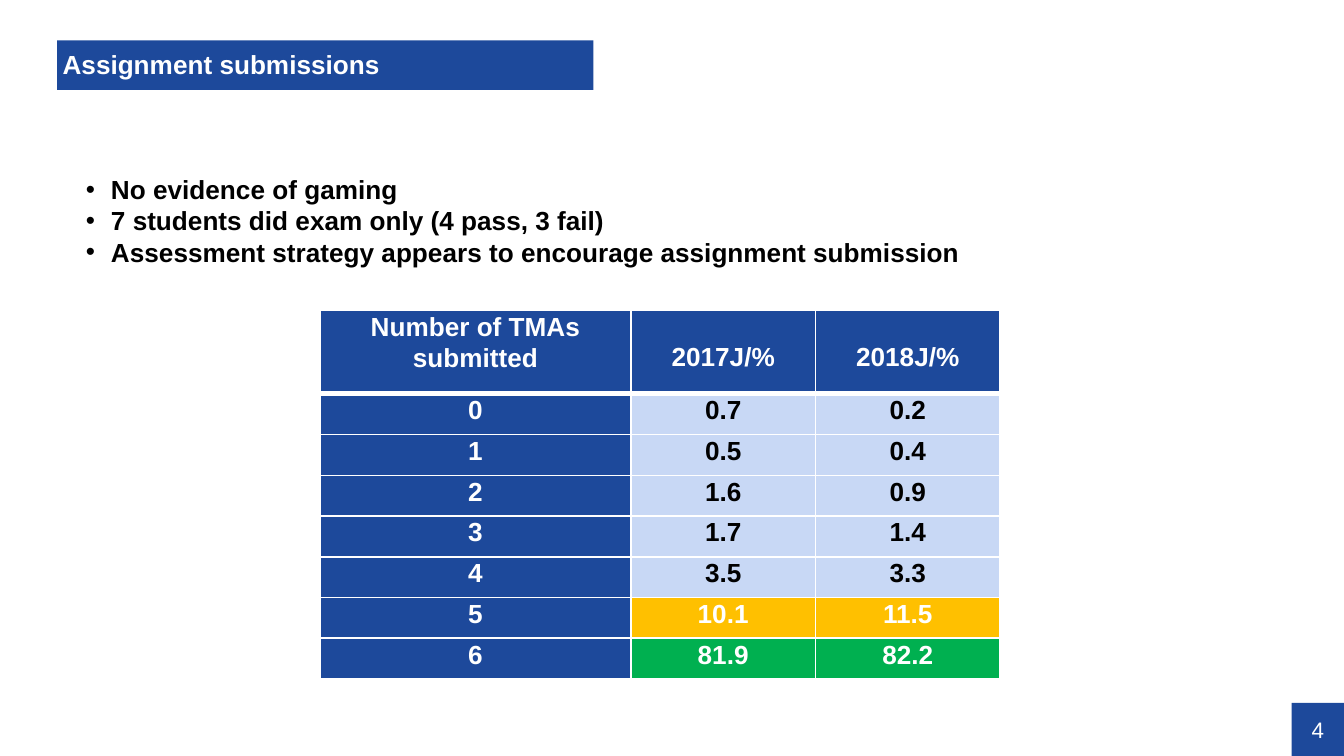
from dataclasses import dataclass

from lxml import etree
from pptx import Presentation
from pptx.dml.color import RGBColor
from pptx.enum.shapes import MSO_SHAPE
from pptx.enum.text import MSO_ANCHOR, MSO_AUTO_SIZE, PP_ALIGN
from pptx.oxml.ns import qn
from pptx.util import Pt

RECTANGLE = MSO_SHAPE.RECTANGLE
MIDDLE = MSO_ANCHOR.MIDDLE
LEFT, CENTER = PP_ALIGN.LEFT, PP_ALIGN.CENTER
GROW = MSO_AUTO_SIZE.SHAPE_TO_FIT_TEXT


@dataclass(frozen=True)
class Theme:
    font: str = "Arial"
    body_size: float = 14
    number_size: float = 12
    blue: str = "1D499B"
    pale_blue: str = "C8D8F5"
    amber: str = "FFC000"
    green: str = "00B050"
    white: str = "FFFFFF"
    black: str = "000000"


THEME = Theme()


@dataclass(frozen=True)
class Banner:
    text: str
    left: float
    top: float
    width: float
    height: float
    size: float
    bold: bool
    align: PP_ALIGN
    line_spacing: float = 1.0
    inset_left: float = 0
    inset_top: float = 0


@dataclass(frozen=True)
class SubmissionRow:
    labels: tuple[str, str, str]
    fill: str = THEME.pale_blue
    color: str = THEME.black


TITLE = Banner("Assignment submissions", 30.6, 21.6, 287.3, 26.6, THEME.body_size,
               True, LEFT, 0.9, 2.9, 1.4)
PAGE_NUMBER = Banner("4", 691.9, 376.6, 28.1, 28.4, THEME.number_size, False, CENTER)

FINDINGS = (
    "No evidence of gaming",
    "7 students did exam only (4 pass, 3 fail)",
    "Assessment strategy appears to encourage assignment submission",
)

SUBMISSIONS = (
    SubmissionRow(("Number of TMAs submitted", "2017J/%", "2018J/%"),
                  THEME.blue, THEME.white),
    SubmissionRow(("0", "0.7", "0.2")),
    SubmissionRow(("1", "0.5", "0.4")),
    SubmissionRow(("2", "1.6", "0.9")),
    SubmissionRow(("3", "1.7", "1.4")),
    SubmissionRow(("4", "3.5", "3.3")),
    SubmissionRow(("5", "10.1", "11.5"), THEME.amber, THEME.white),
    SubmissionRow(("6", "81.9", "82.2"), THEME.green, THEME.white),
)
COLUMN_WIDTHS = (166.6, 98.9, 98.9)
HEADER_HEIGHT, ROW_HEIGHT = 44.6, 21.84
YEAR_DROP = 16  # lowers the year headings to the second heading line


def format_runs(paragraph, size: float, color: str, bold: bool) -> None:
    for run in paragraph.runs:
        run.font.name = THEME.font
        run.font.size = Pt(size)
        run.font.bold = bold
        run.font.color.rgb = RGBColor.from_string(color)


def add_banner(slide, banner: Banner) -> None:
    box = slide.shapes.add_shape(RECTANGLE, Pt(banner.left), Pt(banner.top),
                                 Pt(banner.width), Pt(banner.height))
    box.shadow.inherit = False
    box.fill.solid()
    box.fill.fore_color.rgb = RGBColor.from_string(THEME.blue)
    box.line.fill.background()
    frame = box.text_frame
    frame.word_wrap = True
    frame.vertical_anchor = MIDDLE
    frame.margin_left, frame.margin_top = Pt(banner.inset_left), Pt(banner.inset_top)
    frame.margin_right = frame.margin_bottom = Pt(0)
    frame.text = banner.text
    paragraph = frame.paragraphs[0]
    paragraph.alignment = banner.align
    paragraph.line_spacing = banner.line_spacing
    format_runs(paragraph, banner.size, THEME.white, banner.bold)


def add_findings(slide, findings: tuple[str, ...]) -> None:
    box = slide.shapes.add_textbox(Pt(38.9), Pt(89.3), Pt(617), Pt(58.3))
    frame = box.text_frame
    frame.word_wrap = True
    frame.auto_size = GROW
    frame.text = "\n".join(findings)
    for paragraph in frame.paragraphs:
        properties = paragraph._p.get_or_add_pPr()
        properties.set("marL", str(Pt(13.5)))
        properties.set("indent", str(-Pt(13.5)))
        etree.SubElement(properties, qn("a:buFont"), typeface=THEME.font)
        etree.SubElement(properties, qn("a:buChar"), char="•")
        format_runs(paragraph, THEME.body_size, THEME.black, True)


def set_border(cell, side: str, width: float) -> None:
    line = etree.SubElement(cell._tc.get_or_add_tcPr(), qn(f"a:ln{side}"), w=str(Pt(width)))
    fill = etree.SubElement(line, qn("a:solidFill"))
    etree.SubElement(fill, qn("a:srgbClr"), val=THEME.white)


def style_cell(cell, text: str, fill: str, color: str, is_header: bool,
               below_header: bool, drop: float) -> None:
    set_border(cell, "L", 1)
    set_border(cell, "R", 1)
    set_border(cell, "T", 3 if below_header else 1)
    set_border(cell, "B", 3 if is_header else 1)
    cell.fill.solid()
    cell.fill.fore_color.rgb = RGBColor.from_string(fill)
    cell.margin_left = cell.margin_right = Pt(5)
    cell.margin_top, cell.margin_bottom = Pt(drop), Pt(0)
    cell.text_frame.text = text
    paragraph = cell.text_frame.paragraphs[0]
    paragraph.alignment = CENTER
    paragraph.line_spacing = 1.07
    format_runs(paragraph, THEME.body_size, color, True)


def add_submissions(slide, rows: tuple[SubmissionRow, ...]) -> None:
    heights = [HEADER_HEIGHT] + [ROW_HEIGHT] * (len(rows) - 1)
    table = slide.shapes.add_table(len(rows), len(COLUMN_WIDTHS), Pt(171.4), Pt(166.4),
                                   Pt(sum(COLUMN_WIDTHS)), Pt(sum(heights))).table
    for column, width in zip(table.columns, COLUMN_WIDTHS):
        column.width = Pt(width)
    for r, (row, height) in enumerate(zip(rows, heights)):
        table.rows[r].height = Pt(height)
        for c, label in enumerate(row.labels):
            fill, color = (THEME.blue, THEME.white) if c == 0 else (row.fill, row.color)
            drop = YEAR_DROP if r == 0 and c > 0 else 0
            style_cell(table.cell(r, c), label, fill, color, r == 0, r == 1, drop)


def main() -> None:
    presentation = Presentation()
    presentation.slide_width, presentation.slide_height = Pt(720), Pt(405)
    slide = presentation.slides.add_slide(presentation.slide_layouts[6])

    # Title bar
    add_banner(slide, TITLE)
    # Share of students by number of assignments
    add_submissions(slide, SUBMISSIONS)
    # Page number
    add_banner(slide, PAGE_NUMBER)
    # Main findings
    add_findings(slide, FINDINGS)

    presentation.save("out.pptx")


if __name__ == "__main__":
    main()
